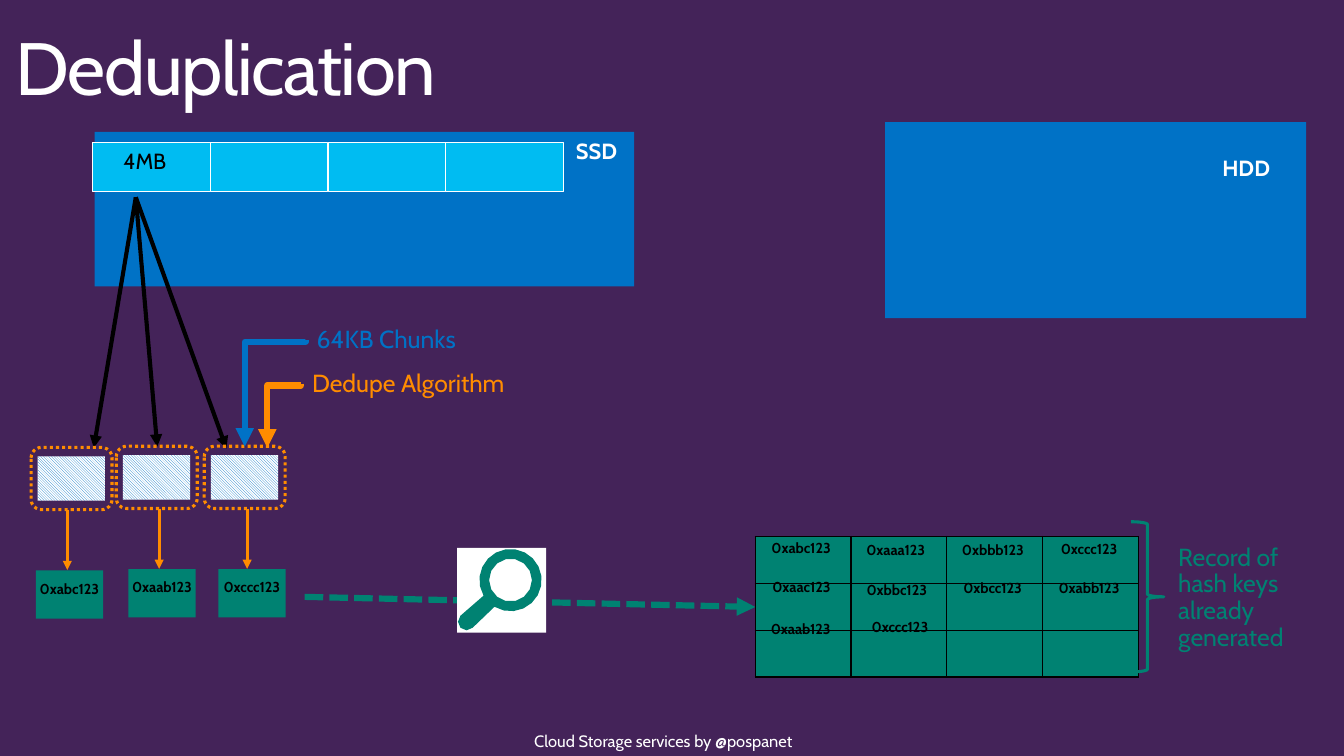
import dataclasses
import math

import lxml.etree
import pptx
import pptx.dml.color
import pptx.enum.dml
import pptx.enum.shapes
import pptx.enum.text
import pptx.oxml.ns
import pptx.util

Cm = pptx.util.Cm
Pt = pptx.util.Pt
Shape = pptx.enum.shapes.MSO_SHAPE
Wire = pptx.enum.shapes.MSO_CONNECTOR
Dash = pptx.enum.dml.MSO_LINE
Align = pptx.enum.text.PP_ALIGN


@dataclasses.dataclass(frozen=True)
class Theme:
    font: str = "Cabin"
    backdrop: str = "442359"
    white: str = "FFFFFF"
    black: str = "000000"
    blue: str = "0072C6"
    cyan: str = "00BCF2"
    orange: str = "FF8C00"
    teal: str = "008272"
    title: float = 54
    note: float = 18
    label: float = 16
    footer: float = 12
    key: float = 10.5


@dataclasses.dataclass(frozen=True)
class Box:
    """An area of the page, in centimetres."""
    left: float
    top: float
    width: float
    height: float

    def inner(self, across, down, width, height):
        return Box(self.left + across, self.top + down, width, height)

    def lengths(self):
        return Cm(self.left), Cm(self.top), Cm(self.width), Cm(self.height)


THEME = Theme()


def rgb(color):
    return pptx.dml.color.RGBColor.from_string(color)


def add_xml(parent, tag, **attributes):
    return lxml.etree.SubElement(parent, pptx.oxml.ns.qn(tag), attributes)


# Building parts
def add_text(page, box, text, size=THEME.label, color=THEME.white, bold=False,
             align=Align.LEFT, inset=(0.51, 0.41), spacing=0.9, after=6, wrap=True, track=None):
    frame = page.shapes.add_textbox(*box.lengths()).text_frame
    frame.word_wrap = wrap
    frame.margin_left = frame.margin_right = Cm(inset[0])
    frame.margin_top = frame.margin_bottom = Cm(inset[1])
    para = frame.paragraphs[0]
    para.alignment, para.line_spacing, para.space_after = align, spacing, Pt(after)
    span = para.add_run()
    span.text = text
    span.font.name, span.font.size, span.font.bold = THEME.font, Pt(size), bold
    span.font.color.rgb = rgb(color)
    if track is not None:
        span._r.get_or_add_rPr().set("spc", str(track))


def add_key(page, center, top, text):
    add_text(page, Box(center - 1.45, top, 2.9, 1.22), text, size=THEME.key,
             color=THEME.black, bold=True, align=Align.CENTER)


def set_style(shape, fill=None, line=None, weight=1, dash=None):
    shape.shadow.inherit = False
    if fill:
        shape.fill.solid()
        shape.fill.fore_color.rgb = rgb(fill)
    else:
        shape.fill.background()
    if line:
        shape.line.color.rgb = rgb(line)
        shape.line.width = Pt(weight)
        shape.line.dash_style = dash
    else:
        shape.line.fill.background()


def add_block(page, box, kind=Shape.RECTANGLE, **style):
    shape = page.shapes.add_shape(kind, *box.lengths())
    set_style(shape, **style)
    return shape


def add_arrow(page, start, end, color, weight, dash=None, kind=Wire.STRAIGHT):
    arrow = page.shapes.add_connector(kind, *map(Cm, start + end))
    arrow.line.color.rgb = rgb(color)
    arrow.line.width = Pt(weight)
    arrow.line.dash_style = dash
    properties = arrow._element.spPr
    add_xml(properties.find(pptx.oxml.ns.qn("a:ln")), "a:tailEnd", type="triangle")
    add_xml(properties, "a:effectLst")
    return arrow


def add_elbow(page, start, end, color):
    """Runs left from start, then down to end: an elbow turned by a quarter."""
    run, drop = start[0] - end[0], end[1] - start[1]
    left = (start[0] + end[0] - drop) / 2
    top = (start[1] + end[1] - run) / 2
    arrow = add_arrow(page, (left, top), (left + drop, top + run), color, 4.5, kind=Wire.ELBOW)
    properties = arrow._element.spPr
    properties.find(pptx.oxml.ns.qn("a:xfrm")).set("rot", "5400000")
    guides = properties.find(pptx.oxml.ns.qn("a:prstGeom")).get_or_add_avLst()
    add_xml(guides, "a:gd", name="adj1", fmla=f"val {round(0.05 / drop * 100000)}")


def arc(x, y, radius, first, last, steps):
    angles = [math.radians(first + (last - first) * step / steps) for step in range(steps + 1)]
    return [(Cm(x + radius * math.cos(angle)), Cm(y + radius * math.sin(angle)))
            for angle in angles]


# Regions
def draw_drive(page, box, name, label_at):
    add_block(page, box, fill=THEME.blue)
    add_text(page, box.inner(*label_at, 2.39, 1.45), name, bold=True, align=Align.RIGHT)


def draw_extents(page, box):
    width = box.width / 4
    for index in range(4):
        add_block(page, box.inner(index * width, 0, width, box.height),
                  fill=THEME.cyan, line=THEME.white, weight=0.75)
    add_text(page, box.inner(0.28, -0.1, 2.57, 1.45), "4MB", color=THEME.black)
    for end in ((2.41, 11.51), (4.04, 11.48), (5.82, 11.53)):
        add_arrow(page, (box.left + 1.11, box.top + 1.41), end, THEME.black, 3)


def draw_chunk(page, box, key, arrow_at, hash_at):
    hatch = add_block(page, box.inner(0.17, 0.23, 1.73, 1.14))
    hatch.fill.patterned()
    hatch.fill.pattern = pptx.enum.dml.MSO_PATTERN.LIGHT_DOWNWARD_DIAGONAL
    hatch.fill.fore_color.rgb = rgb(THEME.blue)
    hatch.fill.back_color.rgb = rgb(THEME.white)
    add_block(page, box, Shape.ROUNDED_RECTANGLE, line=THEME.orange, weight=2.25,
              dash=Dash.ROUND_DOT)
    arrow_x, bottom = box.left + arrow_at, box.top + box.height
    add_arrow(page, (arrow_x, bottom), (arrow_x, bottom + 1.55), THEME.orange, 2.25)
    hashed = box.inner(hash_at, 3.16, 1.73, 1.24)
    add_block(page, hashed, fill=THEME.teal)
    add_key(page, hashed.left + hashed.width / 2, hashed.top + 0.09, key)


def draw_callout(page, box, text, color, end):
    add_text(page, box, text, size=THEME.note, color=color)
    add_elbow(page, (box.left + 0.22, box.top + 0.67), end, color)


def draw_lookup(page, box):
    add_arrow(page, (box.left - 3.92, box.top + 1.26), (box.left + 7.66, box.top + 1.52),
              THEME.teal, 4.5, Dash.SQUARE_DOT)
    add_block(page, box, fill=THEME.white)
    # Magnifier: rim and handle, then the hole of the lens
    x, y = box.left + 1.37, box.top + 0.83
    outline = arc(x, y, 0.8, 121, -210, 18) + arc(box.left + 0.24, box.top + 1.9, 0.22, 225, 45, 4)
    lens = arc(x, y, 0.55, 0, 360, 14)
    builder = page.shapes.build_freeform(*outline[0])
    builder.add_line_segments(outline[1:])
    builder.move_to(*lens[0])
    builder.add_line_segments(lens[1:-1])
    set_style(builder.convert_to_shape(), fill=THEME.teal)


def draw_record(page, box):
    table = page.shapes.add_table(3, 4, *box.lengths()).table
    for cell in table.iter_cells():
        for side in ("a:lnL", "a:lnR", "a:lnT", "a:lnB"):
            border = add_xml(cell._tc.get_or_add_tcPr(), side, w=str(Pt(1)))
            add_xml(add_xml(border, "a:solidFill"), "a:srgbClr", val=THEME.black)
        cell.fill.solid()
        cell.fill.fore_color.rgb = rgb(THEME.teal)
    # Hash keys: centre across, top down, text
    for across, down, key in (
            (1.18, -0.08, "0xabc123"), (3.61, -0.03, "0xaaa123"),
            (6.11, -0.03, "0xbbb123"), (8.58, -0.05, "0xccc123"),
            (1.19, 0.91, "0xaac123"), (3.64, 0.99, "0xbbc123"),
            (6.1, 0.94, "0xbcc123"), (8.58, 0.94, "0xabb123"),
            (1.17, 2.01, "0xaab123"), (3.72, 1.95, "0xccc123")):
        add_key(page, box.left + across, box.top + down, key)
    add_block(page, box.inner(9.66, -0.38, 0.84, 3.86), Shape.RIGHT_BRACE,
              line=THEME.teal, weight=2.25)
    add_text(page, box.inner(10.36, -0.2, 4.34, 3.58), "Record of hash keys already generated",
             size=THEME.note, color=THEME.teal)


def draw_page(page):
    page.background.fill.solid()
    page.background.fill.fore_color.rgb = rgb(THEME.backdrop)
    add_text(page, Box(13.48, 18.67, 7.59, 0.76), "Cloud Storage services by @pospanet",
             size=THEME.footer, inset=(0.25, 0.13), spacing=1, after=0, wrap=False)
    add_text(page, Box(0, 0.55, 34.54, 1.83), "Deduplication", size=THEME.title,
             inset=(0.41, 0.25), after=0, track=-105)
    draw_lookup(page, Box(11.75, 14.08, 2.29, 2.18))
    draw_drive(page, Box(2.43, 3.39, 13.87, 3.97), "SSD", (11.55, -0.07))
    draw_drive(page, Box(22.75, 3.14, 10.82, 5.04), "HDD", (8.01, 0.6))
    draw_extents(page, Box(2.38, 3.66, 12.1, 1.27))
    for left, top, key, arrow_at, hash_at in (
            (0.8, 11.5, "0xabc123", 0.93, 0.12),
            (2.99, 11.47, "0xaab123", 1.1, 0.31),
            (5.25, 11.47, "0xccc123", 1.1, 0.36)):
        draw_chunk(page, Box(left, top, 2.08, 1.6), key, arrow_at, hash_at)
    draw_callout(page, Box(7.63, 8.07, 5.03, 1.52), "64KB Chunks", THEME.blue, (6.29, 11.48))
    draw_callout(page, Box(7.51, 9.19, 6.45, 1.52), "Dedupe Algorithm", THEME.orange,
                 (6.87, 11.51))
    draw_record(page, Box(19.41, 13.79, 9.84, 3.61))


def main():
    deck = pptx.Presentation()
    deck.slide_width, deck.slide_height = Cm(34.54), Cm(19.43)
    draw_page(deck.slides.add_slide(deck.slide_layouts[6]))
    deck.save("out.pptx")


if __name__ == "__main__":
    main()
